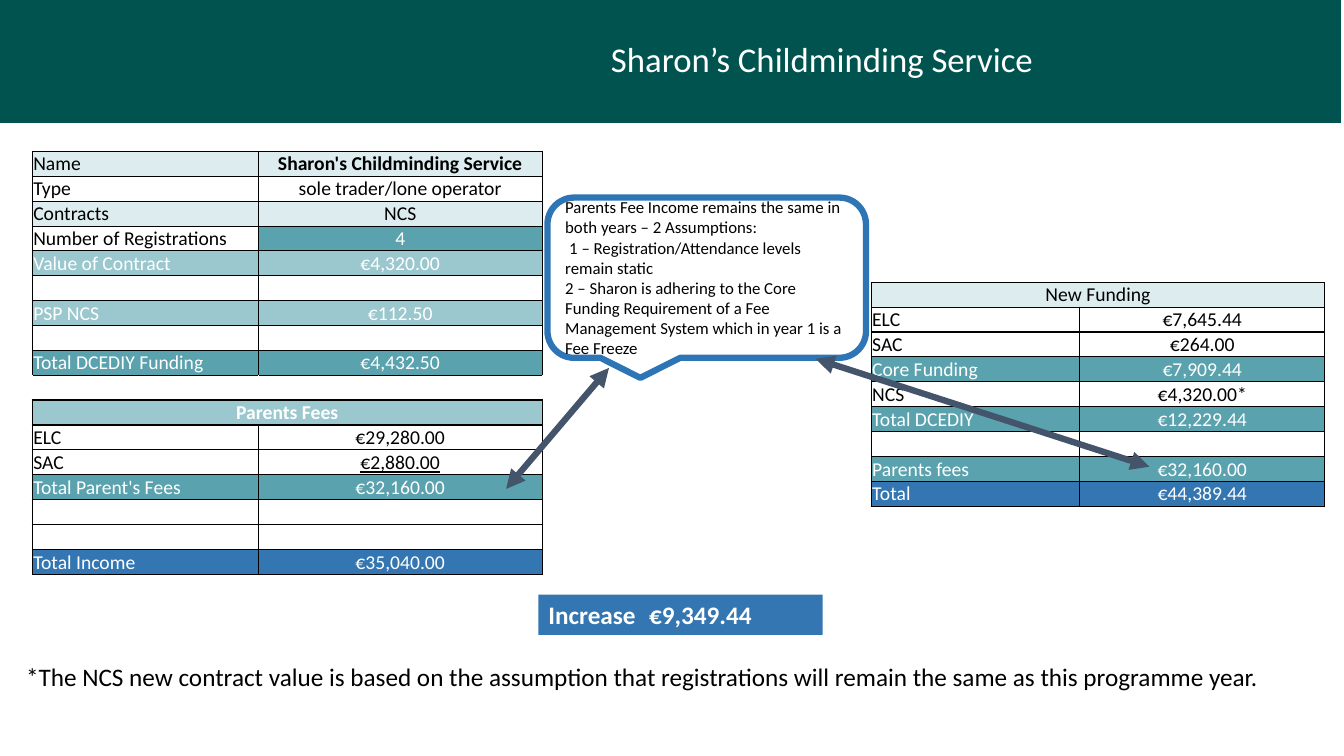
"""Build the funding comparison slide for Sharon's Childminding Service."""
import pptx
import pptx.util
import pptx.dml.color
import pptx.enum.shapes
import pptx.enum.text
import pptx.oxml
import pptx.oxml.ns

GREEN, PALE, LIGHT, TEAL, BLUE = "00534F", "DDECEE", "9BC7CE", "5AA2AE", "3476B1"
BLACK, WHITE, OUTLINE, SLATE = "000000", "FFFFFF", "2E75B6", "44546A"
FONT = "Calibri"
ROW_HEIGHT = 0.24
THIN, THICK = 0.5, 1
BLANK = ("", "", None)

TITLE = "Sharon’s Childminding Service"
CURRENT_FUNDING = [
    ("Name", "Sharon's Childminding Service", PALE),
    ("Type", "sole trader/lone operator", None),
    ("Contracts", "NCS", PALE),
    ("Number of Registrations", "4", (None, TEAL)),
    ("Value of Contract", "€4,320.00", LIGHT),
    BLANK,
    ("PSP NCS", "€112.50", LIGHT),
    BLANK,
    ("Total DCEDIY Funding", "€4,432.50", TEAL),
]
PARENTS_FEES = [
    ("Parents Fees", None, LIGHT),
    ("ELC", "€29,280.00", None),
    ("SAC", "€2,880.00", None),
    ("Total Parent's Fees", "€32,160.00", TEAL),
    BLANK,
    BLANK,
    ("Total Income", "€35,040.00", BLUE),
]
NEW_FUNDING = [
    ("New Funding", None, PALE),
    ("ELC", "€7,645.44", None),
    ("SAC", "€264.00", None),
    ("Core Funding", "€7,909.44", TEAL),
    ("NCS", "€4,320.00*", None),
    ("Total DCEDIY", "€12,229.44", TEAL),
    BLANK,
    ("Parents fees", "€32,160.00", TEAL),
    ("Total", "€44,389.44", BLUE),
]
BOLD = {"Sharon's Childminding Service", "Parents Fees"}
UNDERLINED = {"€2,880.00"}
ALL_SIDES = dict.fromkeys("LRTB", THICK)
THIN_SIDES = dict.fromkeys("LRTB", THIN)
CURRENT_BORDERS = ([THIN_SIDES] * len(CURRENT_FUNDING) + [{"T": THIN, "B": THICK}]
                   + [ALL_SIDES] * len(PARENTS_FEES))
ASSUMPTIONS = [
    ("Parents Fee Income remains the same in both years – 2 Assumptions:", 0),
    ("1 – Registration/Attendance levels remain static", 0.04),
    ("2 – Sharon is adhering to the Core Funding Requirement of a Fee Management "
     "System which in year 1 is a Fee Freeze", 0),
]
INCREASE = "Increase\t€9,349.44"
FOOTNOTE = ("*The NCS new contract value is based on the assumption that registrations "
            "will remain the same as this programme year.")
ARROWS = [((5.02, 4.85), (6.04, 3.65)), ((8.09, 3.56), (11.4, 4.63))]


def inches(*lengths):
    return [pptx.util.Inches(length) for length in lengths]


def color(value):
    return pptx.dml.color.RGBColor.from_string(value)


def paint(fill, value):
    if value is None:
        fill.background()
    else:
        fill.solid()
        fill.fore_color.rgb = color(value)


def write(paragraph, text, size, value, align="LEFT", bold=False):
    paragraph.text = text
    paragraph.alignment = getattr(pptx.enum.text.PP_ALIGN, align)
    font = paragraph.font
    font.name, font.size, font.bold = FONT, pptx.util.Pt(size), bold
    font.color.rgb = color(value)
    if not text:
        paragraph._p.get_or_add_endParaRPr().set("sz", str(size * 100))


def add_box(slide, kind, place, fill, line=None, width=0):
    shape = slide.shapes.add_shape(kind, *inches(*place))
    shape.shadow.inherit = False
    paint(shape.fill, fill)
    paint(shape.line.fill, line)
    if line:
        shape.line.width = pptx.util.Pt(width)
    return shape


def set_borders(cell, sides):
    properties = cell._tc.get_or_add_tcPr()
    for side in "LRTB":
        if side in sides:
            properties.append(pptx.oxml.parse_xml(
                f'<a:ln{side} {pptx.oxml.ns.nsdecls("a")} w="{int(sides[side] * 12700)}">'
                f'<a:solidFill><a:srgbClr val="{BLACK}"/></a:solidFill></a:ln{side}>'))


def fill_cell(cell, text, fill, borders, centred):
    cell.margin_left = cell.margin_right = cell.margin_top = pptx.util.Inches(0.01)
    cell.margin_bottom = 0
    anchor = pptx.enum.text.MSO_ANCHOR
    cell.vertical_anchor = anchor.MIDDLE if centred else anchor.BOTTOM
    set_borders(cell, borders)
    paint(cell.fill, fill)
    paragraph = cell.text_frame.paragraphs[0]
    write(paragraph, text, 14, BLACK if fill in (None, PALE) else WHITE,
          "CENTER" if centred else "LEFT", text in BOLD)
    if text in UNDERLINED:
        paragraph.font.underline = True


def add_funding_table(slide, left, top, columns, rows, borders):
    table = slide.shapes.add_table(
        len(rows), 2, *inches(left, top, sum(columns), ROW_HEIGHT * len(rows))).table
    table.first_row = table.horz_banding = False
    for column, width in zip(table.columns, columns):
        column.width = pptx.util.Inches(width)
    for index, (label, amount, fill) in enumerate(rows):
        table.rows[index].height = pptx.util.Inches(ROW_HEIGHT)
        heading = amount is None
        fills = fill if isinstance(fill, tuple) else (fill, fill)
        for position, text in enumerate((label, amount or "")):
            fill_cell(table.cell(index, position), text, fills[position],
                      borders[index], heading or position == 1)
        if heading:
            table.cell(index, 0).merge(table.cell(index, 1))


def add_arrow(slide, start, end):
    arrow = slide.shapes.add_connector(
        pptx.enum.shapes.MSO_CONNECTOR.STRAIGHT, *inches(*start, *end))
    arrow.line.width = pptx.util.Pt(4.5)
    arrow.line.color.rgb = color(SLATE)
    for name in ("headEnd", "tailEnd"):
        arrow.line._get_or_add_ln().append(pptx.oxml.parse_xml(
            f'<a:{name} {pptx.oxml.ns.nsdecls("a")} type="triangle"/>'))
    arrow._element.spPr.append(pptx.oxml.parse_xml(
        f'<a:effectLst {pptx.oxml.ns.nsdecls("a")}/>'))


def main():
    presentation = pptx.Presentation()
    presentation.slide_width, presentation.slide_height = inches(13.33, 7.5)
    slide = presentation.slides.add_slide(presentation.slide_layouts[5])
    kinds = pptx.enum.shapes.MSO_SHAPE
    middle = pptx.enum.text.MSO_ANCHOR.MIDDLE

    add_box(slide, kinds.RECTANGLE, (0, 0, 3.04, 1.22), GREEN)
    title = slide.shapes.title
    title.left, title.top, title.width, title.height = inches(3.01, 0, 10.29, 1.22)
    paint(title.fill, GREEN)
    title.text_frame.vertical_anchor = middle
    write(title.text_frame.paragraphs[0], TITLE, 24.8, WHITE, "CENTER")
    title.text_frame.paragraphs[0].line_spacing = 0.9

    add_funding_table(slide, 0.32, 1.5, (2.24, 2.82),
                      CURRENT_FUNDING + [BLANK] + PARENTS_FEES, CURRENT_BORDERS)
    increase = add_box(slide, kinds.RECTANGLE, (5.34, 5.9, 2.82, 0.4), BLUE)
    write(increase.text_frame.paragraphs[0], INCREASE, 18, WHITE, bold=True)
    add_funding_table(slide, 8.64, 2.8, (2.07, 2.43), NEW_FUNDING,
                      [ALL_SIDES] * len(NEW_FUNDING))

    footnote = slide.shapes.add_textbox(*inches(0.16, 6.51, 12.82, 0.4)).text_frame
    footnote.word_wrap = True
    write(footnote.paragraphs[0], FOOTNOTE, 18, BLACK)

    callout = add_box(slide, kinds.ROUNDED_RECTANGULAR_CALLOUT,
                      (5.43, 1.96, 3.16, 1.59), WHITE, OUTLINE, 4.5).text_frame
    callout.vertical_anchor = middle
    for index, (text, indent) in enumerate(ASSUMPTIONS):
        paragraph = callout.add_paragraph() if index else callout.paragraphs[0]
        write(paragraph, text, 12, BLACK)
        paragraph._p.get_or_add_pPr().set("indent", str(pptx.util.Inches(indent)))
    for start, end in ARROWS:
        add_arrow(slide, start, end)
    presentation.save("out.pptx")


if __name__ == "__main__":
    main()
